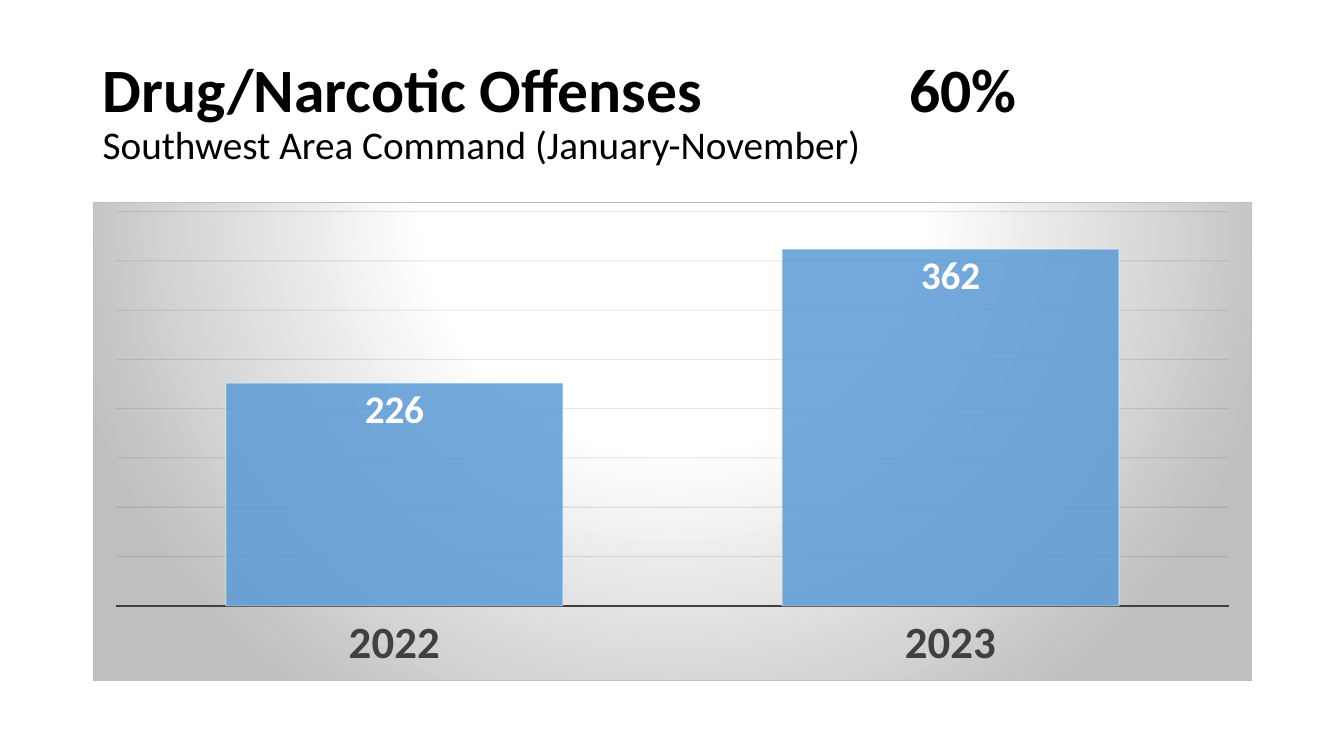
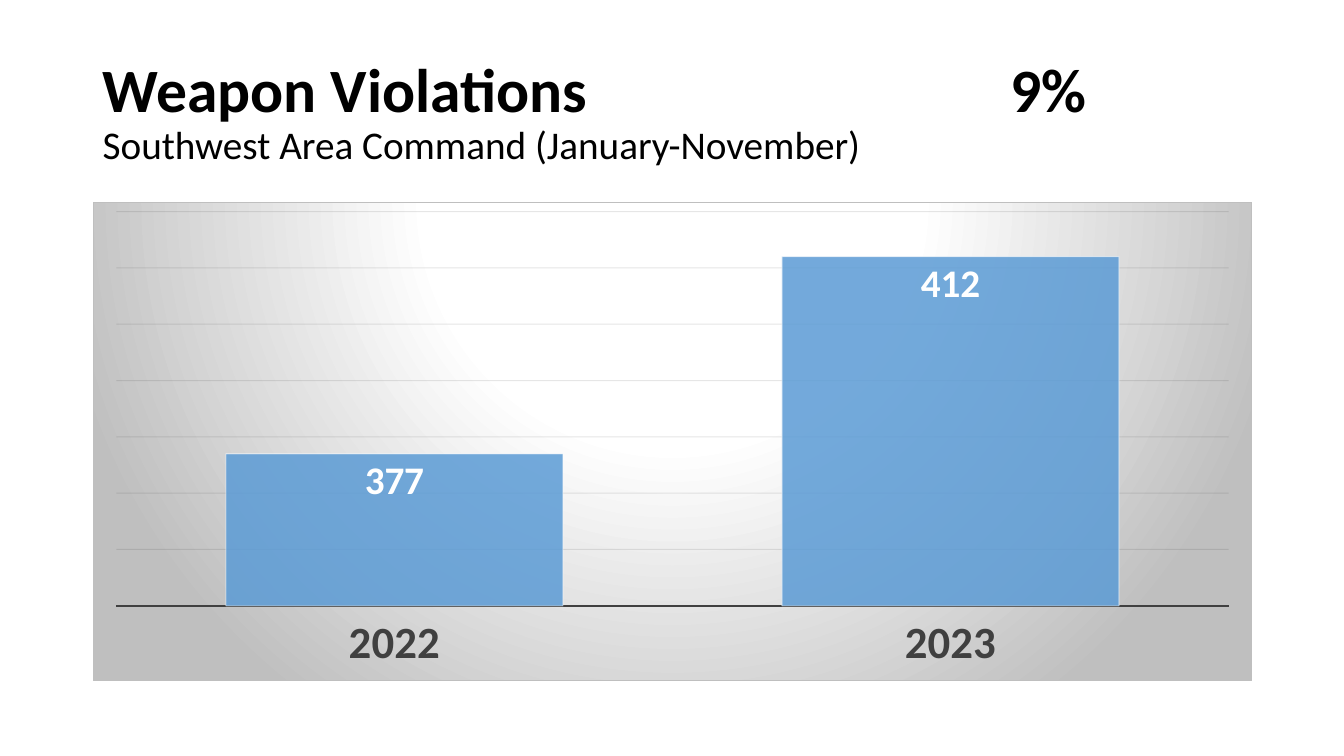
from pptx import Presentation
from pptx.chart.data import CategoryChartData
from pptx.dml.color import RGBColor
from pptx.enum.chart import XL_CHART_TYPE as ChartType
from pptx.enum.chart import XL_LABEL_POSITION as LabelPosition
from pptx.enum.chart import XL_TICK_LABEL_POSITION as TickLabels
from pptx.enum.chart import XL_TICK_MARK as TickMark
from pptx.enum.text import MSO_ANCHOR as Anchor
from pptx.oxml import parse_xml
from pptx.oxml.ns import nsdecls, qn
from pptx.util import Inches, Pt

# Shared look
FONT = "Calibri"
BLACK, WHITE = "000000", "FFFFFF"
BAR, GRID, AXIS, EDGE = "5B9BD5", "0D0D0D", "404040", "BFBFBF"
TITLE_BOX = (0.92, 0.4, 11.5, 1.45)
CHART_BOX = (0.92, 2, 11.5, 4.76)
SUBTITLE = "Southwest Area Command (January-November)"
YEARS = ("2022", "2023")

# Offense, change, tab stop of the change, yearly counts, axis (low, high, step)
OFFENSES = (
    ("Drug/Narcotic Offenses", "60%", 8, (226, 362), (0, 400, 50)),
    ("Weapon Violations", "9%", 9, (377, 412), (350, 420, 10)),
)


def color(hex_text):
    return RGBColor.from_string(hex_text)


def style_font(font, size, fill=BLACK, bold=False):
    font.name, font.size, font.bold = FONT, Pt(size), bold
    font.color.rgb = color(fill)


def style_line(line, fill, width):
    line.color.rgb = color(fill)
    line.width = Pt(width)


def add_text(para, text, **style):
    span = para.add_run()
    span.text = text
    style_font(span.font, **style)


def set_alpha(root, query, percent):
    """Make the colours found by the query partly transparent."""
    for tint in root.xpath(query):
        tint.append(parse_xml(f'<a:alpha {nsdecls("a")} val="{percent * 1000}"/>'))


def add_title(page, box, offense, change, tab_stop):
    frame = page.shapes.add_textbox(*map(Inches, box)).text_frame
    frame.word_wrap = True
    frame.vertical_anchor = Anchor.MIDDLE
    para = frame.paragraphs[0]
    para.line_spacing = 0.9
    # One tab stop places the percentage change
    para._p.get_or_add_pPr().append(parse_xml(
        f'<a:tabLst {nsdecls("a")}><a:tab pos="{Inches(tab_stop)}" algn="l"/></a:tabLst>'))
    add_text(para, f"{offense}\t{change}", size=44, bold=True)
    para.add_line_break()
    add_text(para, SUBTITLE, size=28)


def add_backdrop(chart):
    """Give the chart area a radial gradient and a thin border."""
    stops = "".join(
        f'<a:gs pos="{place * 1000}"><a:srgbClr val="{tint}"/></a:gs>'
        for place, tint in ((0, WHITE), (39, WHITE), (100, EDGE)))
    backdrop = parse_xml(
        f'<c:spPr {nsdecls("c", "a")}><a:gradFill><a:gsLst>{stops}</a:gsLst>'
        '<a:path path="circle">'
        '<a:fillToRect l="50000" t="-80000" r="50000" b="180000"/></a:path></a:gradFill>'
        f'<a:ln w="{Pt(0.75)}"><a:solidFill><a:srgbClr val="{EDGE}"/></a:solidFill></a:ln>'
        '</c:spPr>')
    chart.element.find(qn("c:chart")).addnext(backdrop)


def add_bars(page, box, counts, scale):
    data = CategoryChartData()
    data.categories = YEARS
    data.add_series("Series 1", counts)
    chart = page.shapes.add_chart(
        ChartType.COLUMN_CLUSTERED, *map(Inches, box), data).chart
    chart.has_legend = chart.has_title = False
    style_font(chart.font, size=10)
    add_backdrop(chart)

    # Axes
    years = chart.category_axis
    years.major_tick_mark = years.minor_tick_mark = TickMark.NONE
    years.tick_label_position = TickLabels.LOW
    style_font(years.tick_labels.font, size=32, fill=AXIS, bold=True)
    style_line(years.format.line, AXIS, 1.5)
    values = chart.value_axis
    values.minimum_scale, values.maximum_scale, values.major_unit = scale
    values.visible = False
    values.has_major_gridlines = True
    style_line(values.major_gridlines.format.line, GRID, 0.75)
    set_alpha(chart.element, ".//c:majorGridlines//a:srgbClr", 10)

    # Bars and their labels
    plot = chart.plots[0]
    plot.gap_width = 65
    plot.vary_by_categories = False
    bars = plot.series[0]
    bars.format.fill.solid()
    bars.format.fill.fore_color.rgb = color(BAR)
    style_line(bars.format.line, WHITE, 0.75)
    set_alpha(chart.element, ".//c:ser/c:spPr/a:solidFill/a:srgbClr", 85)
    set_alpha(chart.element, ".//c:ser/c:spPr/a:ln//a:srgbClr", 50)
    labels = bars.data_labels
    labels.show_value = True
    labels.position = LabelPosition.INSIDE_END
    style_font(labels.font, size=28, fill=WHITE, bold=True)


def main():
    deck = Presentation()
    deck.slide_width, deck.slide_height = Inches(13.33), Inches(7.5)
    for offense, change, tab_stop, counts, scale in OFFENSES:
        page = deck.slides.add_slide(deck.slide_layouts[6])
        add_title(page, TITLE_BOX, offense, change, tab_stop)
        add_bars(page, CHART_BOX, counts, scale)
    deck.save("out.pptx")


if __name__ == "__main__":
    main()
